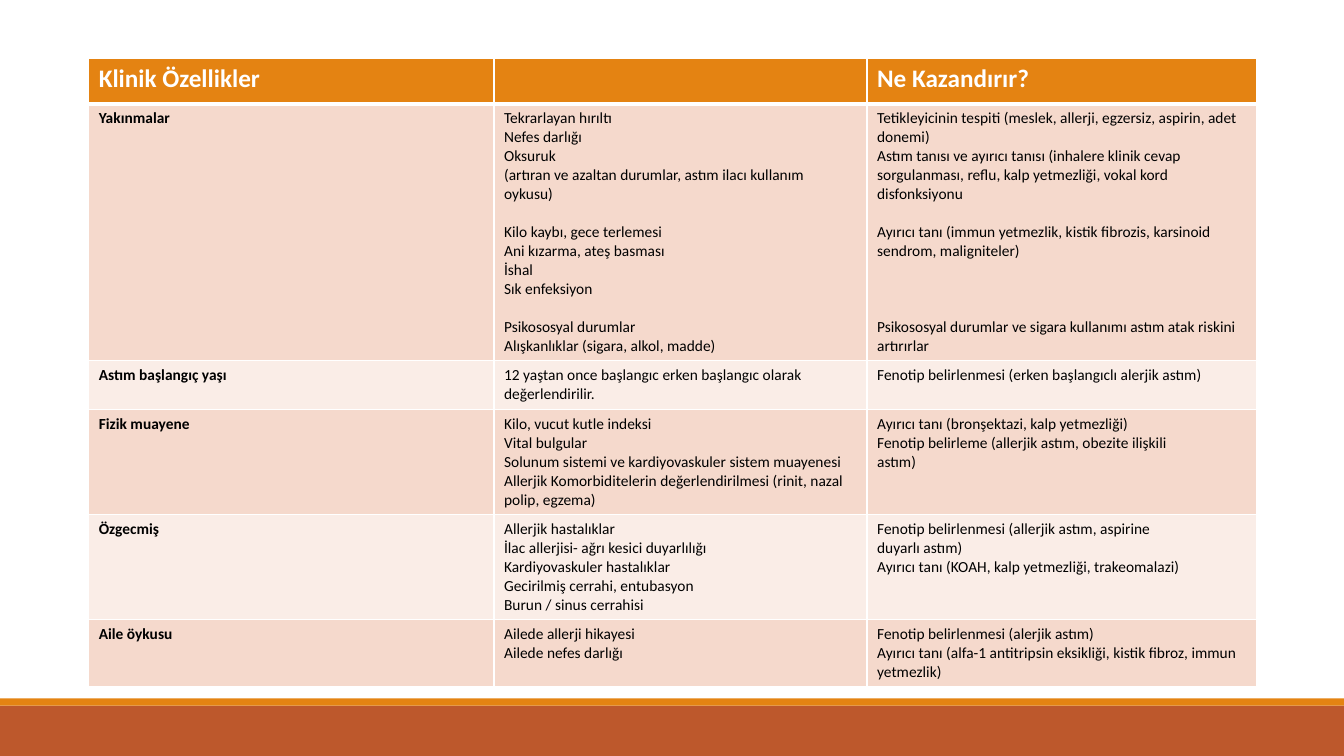
from pptx import Presentation
from pptx.dml.color import RGBColor as RGB
from pptx.enum.shapes import MSO_SHAPE as Shape
from pptx.oxml.ns import qn
from pptx.util import Inches, Pt
from lxml.etree import SubElement

HEADINGS = ("Klinik Özellikler", "", "Ne Kazandırır?")

# A number before a line is the count of line heights left free above it.
FEATURES = [
    ("Yakınmalar",
     ["Tekrarlayan hırıltı", "Nefes darlığı", "Oksuruk",
      "(artıran ve azaltan durumlar, astım ilacı kullanım", "oykusu)",
      (1, "Kilo kaybı, gece terlemesi"), "Ani kızarma, ateş basması",
      "İshal", "Sık enfeksiyon",
      (1, "Psikososyal durumlar"), "Alışkanlıklar (sigara, alkol, madde)"],
     ["Tetikleyicinin tespiti (meslek, allerji, egzersiz, aspirin, adet donemi)",
      "Astım tanısı ve ayırıcı tanısı (inhalere klinik cevap sorgulanması, "
      "reflu, kalp yetmezliği, vokal kord disfonksiyonu",
      (1, "Ayırıcı tanı (immun yetmezlik, kistik fibrozis, karsinoid sendrom, "
          "maligniteler)"),
      (3, "Psikososyal durumlar ve sigara kullanımı astım atak riskini "
          "artırırlar")]),
    ("Astım başlangıç yaşı",
     ["12 yaştan once başlangıc erken başlangıc olarak değerlendirilir."],
     ["Fenotip belirlenmesi (erken başlangıclı alerjik astım)"]),
    ("Fizik muayene",
     ["Kilo, vucut kutle indeksi", "Vital bulgular",
      "Solunum sistemi ve kardiyovaskuler sistem muayenesi",
      "Allerjik Komorbiditelerin değerlendirilmesi (rinit, nazal polip, egzema)"],
     ["Ayırıcı tanı (bronşektazi, kalp yetmezliği)",
      "Fenotip belirleme (allerjik astım, obezite ilişkili", "astım)"]),
    ("Özgecmiş",
     ["Allerjik hastalıklar", "İlac allerjisi- ağrı kesici duyarlılığı",
      "Kardiyovaskuler hastalıklar", "Gecirilmiş cerrahi, entubasyon",
      "Burun / sinus cerrahisi"],
     ["Fenotip belirlenmesi (allerjik astım, aspirine", "duyarlı astım)",
      "Ayırıcı tanı (KOAH, kalp yetmezliği, trakeomalazi)"]),
    ("Aile öykusu",
     ["Ailede allerji hikayesi", "Ailede nefes darlığı"],
     ["Fenotip belirlenmesi (alerjik astım)",
      "Ayırıcı tanı (alfa-1 antitripsin eksikliği, kistik fibroz, "
      "immun yetmezlik)"]),
]

THEME = {
    "font": "Calibri", "heading_size": 18, "body_size": 11, "line_height": 13.5,
    "accent": "E48312", "footer": "BD582C", "bands": ("F5D9CC", "FAEDE7"),
    "light": "FFFFFF", "dark": "000000", "rule": 1, "heading_rule": 3,
}

SLIDE_W, SLIDE_H = 13.33, 7.5
TABLE_LEFT, TABLE_TOP = 0.88, 0.58
COLUMN_WIDTHS = (4.02, 3.7, 3.86)
ROW_HEIGHTS = (0.45, 2.54, 0.48, 1.04, 1.04, 0.67)
FOOTER_BANDS = ((7, 0.5, THEME["footer"]), (6.93, 0.07, THEME["accent"]))


def write(frame, lines, size, color, bold=False):
    for index, line in enumerate(lines):
        gap, text = line if isinstance(line, tuple) else (0, line)
        paragraph = frame.paragraphs[0] if index == 0 else frame.add_paragraph()
        if gap:
            paragraph.space_before = Pt(gap * THEME["line_height"])
        if not text:
            paragraph.font.size = Pt(size)
            continue
        run = paragraph.add_run()
        run.text = text
        run.font.name = THEME["font"]
        run.font.size = Pt(size)
        run.font.bold = bold
        run.font.color.rgb = RGB.from_string(color)


def paint(part, color):
    part.fill.solid()
    part.fill.fore_color.rgb = RGB.from_string(color)


def rule_cell(cell, top, bottom):
    """Draw the four cell borders; call before filling the cell."""
    properties = cell._tc.get_or_add_tcPr()
    sides = {"L": THEME["rule"], "R": THEME["rule"], "T": top, "B": bottom}
    for side, width in sides.items():
        border = SubElement(properties, qn(f"a:ln{side}"), w=str(Pt(width)))
        fill = SubElement(border, qn("a:solidFill"))
        SubElement(fill, qn("a:srgbClr"), val=THEME["light"])


def add_footer(slide):
    for top, height, color in FOOTER_BANDS:
        band = slide.shapes.add_shape(
            Shape.RECTANGLE, 0, Inches(top), Inches(SLIDE_W), Inches(height))
        band.shadow.inherit = False
        band.line.fill.background()
        paint(band, color)


def add_features(slide):
    rows = [[[heading] for heading in HEADINGS]]
    rows += [[[feature], findings, gains] for feature, findings, gains in FEATURES]
    table = slide.shapes.add_table(
        len(rows), len(HEADINGS), Inches(TABLE_LEFT), Inches(TABLE_TOP),
        Inches(sum(COLUMN_WIDTHS)), Inches(sum(ROW_HEIGHTS))).table
    for column, width in zip(table.columns, COLUMN_WIDTHS):
        column.width = Inches(width)
    for r, (row, height) in enumerate(zip(rows, ROW_HEIGHTS)):
        table.rows[r].height = Inches(height)
        heading = r == 0
        top = THEME["heading_rule"] if r == 1 else THEME["rule"]
        bottom = THEME["heading_rule"] if heading else THEME["rule"]
        for c, lines in enumerate(row):
            cell = table.cell(r, c)
            rule_cell(cell, top, bottom)
            paint(cell, THEME["accent"] if heading else THEME["bands"][(r - 1) % 2])
            write(cell.text_frame, lines,
                  size=THEME["heading_size" if heading else "body_size"],
                  color=THEME["light" if heading else "dark"],
                  bold=heading or c == 0)


def main():
    deck = Presentation()
    deck.slide_width, deck.slide_height = Inches(SLIDE_W), Inches(SLIDE_H)
    slide = deck.slides.add_slide(deck.slide_layouts[6])
    add_footer(slide)
    add_features(slide)
    deck.save("out.pptx")


if __name__ == "__main__":
    main()
